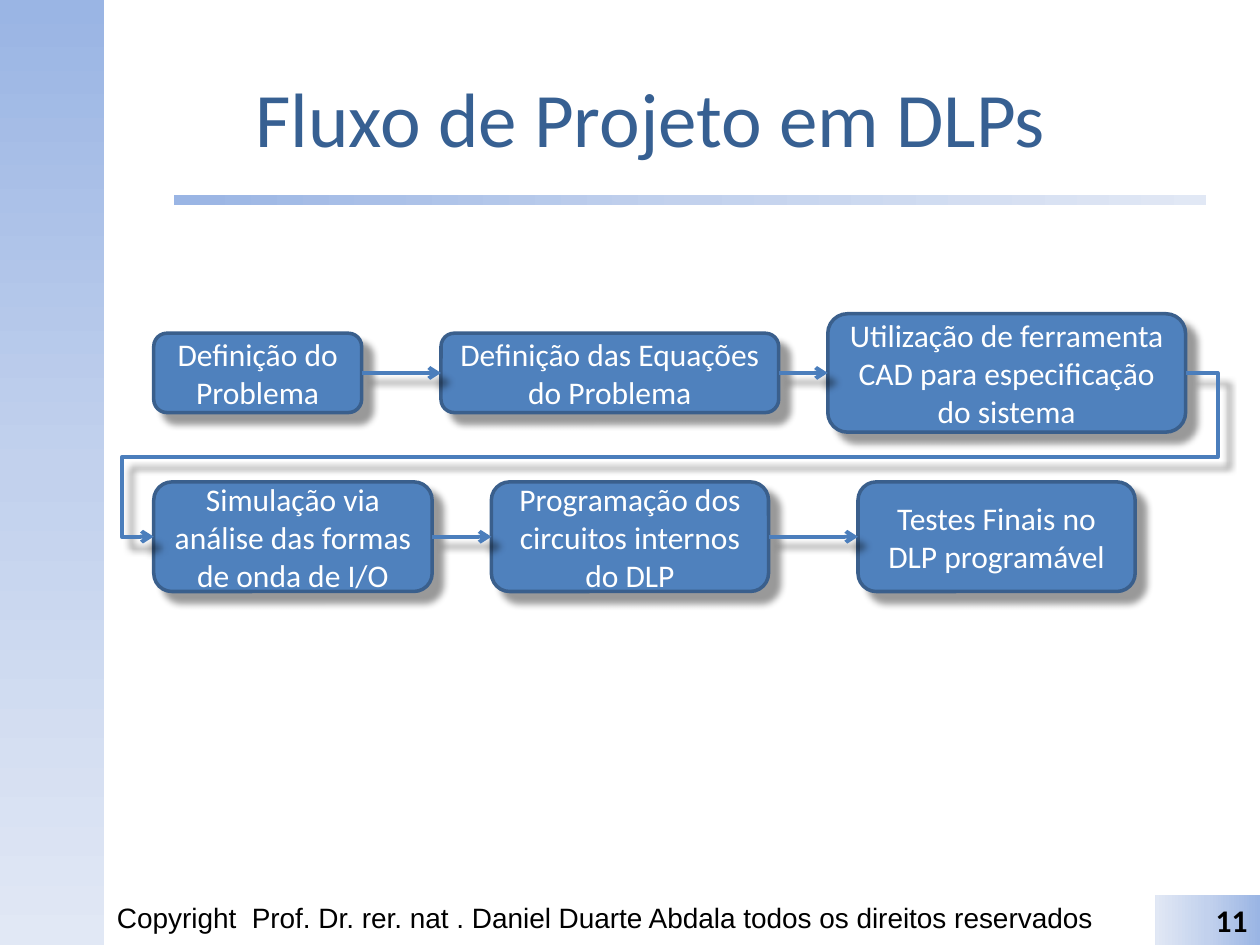
import pptx
import pptx.util
from lxml import etree
from pptx.dml.color import RGBColor
from pptx.enum.shapes import MSO_CONNECTOR, MSO_SHAPE
from pptx.enum.text import MSO_ANCHOR, PP_ALIGN
from pptx.oxml import parse_xml
from pptx.oxml.ns import nsdecls, qn
from pptx.util import Inches

COLORS = {
    "title": "376092", "step": "4F81BD", "outline": "3A5F8C", "arrow": "4B7EBC",
    "light_text": "FFFFFF", "dark_text": "000000", "shadow": "000000",
    "deep": "9AB5E4", "mid": "C2D1ED", "pale": "E1E8F5",
}


def write(shape, text, size, color, font="Calibri", bold=False,
          align=PP_ALIGN.LEFT, anchor=MSO_ANCHOR.TOP):
    frame = shape.text_frame
    frame.word_wrap = True
    frame.vertical_anchor = anchor
    paragraph = frame.paragraphs[0]
    paragraph.alignment = align
    run = paragraph.add_run()
    run.text = text
    run.font.name = font
    run.font.size = pptx.util.Pt(size)
    run.font.bold = bold
    run.font.color.rgb = RGBColor.from_string(COLORS[color])


def cast_shadow(shape):
    """Add the soft lower-right shadow; the line must already be set."""
    properties = shape._element.spPr
    for old in properties.findall(qn("a:effectLst")):
        properties.remove(old)
    properties.append(parse_xml(
        f'<a:effectLst {nsdecls("a")}>'
        '<a:outerShdw blurRad="50800" dist="101600" dir="2700000" algn="tl" rotWithShape="0">'
        f'<a:srgbClr val="{COLORS["shadow"]}"><a:alpha val="40000"/></a:srgbClr>'
        '</a:outerShdw></a:effectLst>'))


presentation = pptx.Presentation()
presentation.slide_width = Inches(10)
presentation.slide_height = Inches(7.5)
slide = presentation.slides.add_slide(presentation.slide_layouts[5])
shapes = slide.shapes

# Gradient side band, title rule and page number corner
decorations = []
for kind, left, top, width, height, angle in [
    (MSO_SHAPE.RECTANGLE, 0, 0, 0.83, 7.5, 90),
    (MSO_SHAPE.ROUNDED_RECTANGLE, 1.38, 1.55, 8.19, 0.08, 0),
    (MSO_SHAPE.RECTANGLE, 9.17, 7.1, 0.83, 0.4, 180),
]:
    decoration = shapes.add_shape(kind, Inches(left), Inches(top), Inches(width), Inches(height))
    decoration.shadow.inherit = False
    decoration.line.fill.background()
    decoration.fill.background()
    stops = "".join(
        f'<a:gs pos="{position * 1000}"><a:srgbClr val="{COLORS[tone]}"/></a:gs>'
        for position, tone in [(0, "deep"), (50, "mid"), (100, "pale")])
    properties = decoration._element.spPr
    properties.replace(properties.find(qn("a:noFill")), parse_xml(
        f'<a:gradFill {nsdecls("a")} rotWithShape="1"><a:gsLst>{stops}</a:gsLst>'
        f'<a:lin ang="{angle * 60000}" scaled="0"/></a:gradFill>'))
    decorations.append(decoration)
side_band, title_rule, page_corner = decorations
title_rule.adjustments[0] = 0

title = shapes.title
title.left, title.top, title.width, title.height = (
    Inches(0.83), Inches(0.3), Inches(8.67), Inches(1.25))
write(title, "Fluxo de Projeto em DLPs", 44, "title",
      align=PP_ALIGN.CENTER, anchor=MSO_ANCHOR.MIDDLE)

copyright_line = shapes.add_textbox(Inches(0.83), Inches(7.1), Inches(8.13), Inches(0.4))
write(copyright_line,
      "Copyright  Prof. Dr. rer. nat . Daniel Duarte Abdala todos os direitos reservados",
      16, "dark_text", font="Arial")
write(page_corner, "11", 18, "dark_text", bold=True, align=PP_ALIGN.RIGHT)

# Design steps: centre line of each row, then left, width, height and text
rows = [
    (2.96, [(1.22, 1.65, 0.63, "Definição do Problema"),
            (3.5, 2.68, 0.63, "Definição das Equações do Problema"),
            (6.57, 2.84, 0.94, "Utilização de ferramenta CAD para especificação do sistema")]),
    (4.26, [(1.22, 2.21, 0.87, "Simulação via análise das formas de onda de I/O"),
            (3.9, 2.2, 0.87, "Programação dos circuitos internos do DLP"),
            (6.81, 2.2, 0.87, "Testes Finais no DLP programável")]),
]
steps = []
for center, row in rows:
    for left, width, height, text in row:
        step = shapes.add_shape(MSO_SHAPE.ROUNDED_RECTANGLE, Inches(left),
                                Inches(center - height / 2), Inches(width), Inches(height))
        step.fill.solid()
        step.fill.fore_color.rgb = RGBColor.from_string(COLORS["step"])
        step.line.color.rgb = RGBColor.from_string(COLORS["outline"])
        step.line.width = pptx.util.Pt(2)
        cast_shadow(step)
        write(step, text, 18, "light_text", align=PP_ALIGN.CENTER, anchor=MSO_ANCHOR.MIDDLE)
        steps.append(step)

# Arrows from each step to the next; the one that changes row goes around
for source, target in zip(steps, steps[1:]):
    changes_row = target.left < source.left
    kind = MSO_CONNECTOR.ELBOW if changes_row else MSO_CONNECTOR.STRAIGHT
    arrow = shapes.add_connector(
        kind, source.left + source.width, source.top + source.height // 2,
        target.left, target.top + target.height // 2)
    arrow.begin_connect(source, 3)
    arrow.end_connect(target, 1)
    if changes_row:
        geometry = arrow._element.spPr.find(qn("a:prstGeom"))
        geometry.set("prst", "bentConnector5")
        guides = geometry.find(qn("a:avLst"))
        for number, value in enumerate([-3100, 51500, 103100], start=1):
            etree.SubElement(guides, qn("a:gd"), name=f"adj{number}", fmla=f"val {value}")
    arrow.line.color.rgb = RGBColor.from_string(COLORS["arrow"])
    arrow.line.width = pptx.util.Pt(2.25)
    etree.SubElement(arrow.line._get_or_add_ln(), qn("a:tailEnd"), type="arrow")
    cast_shadow(arrow)

presentation.save("out.pptx")
